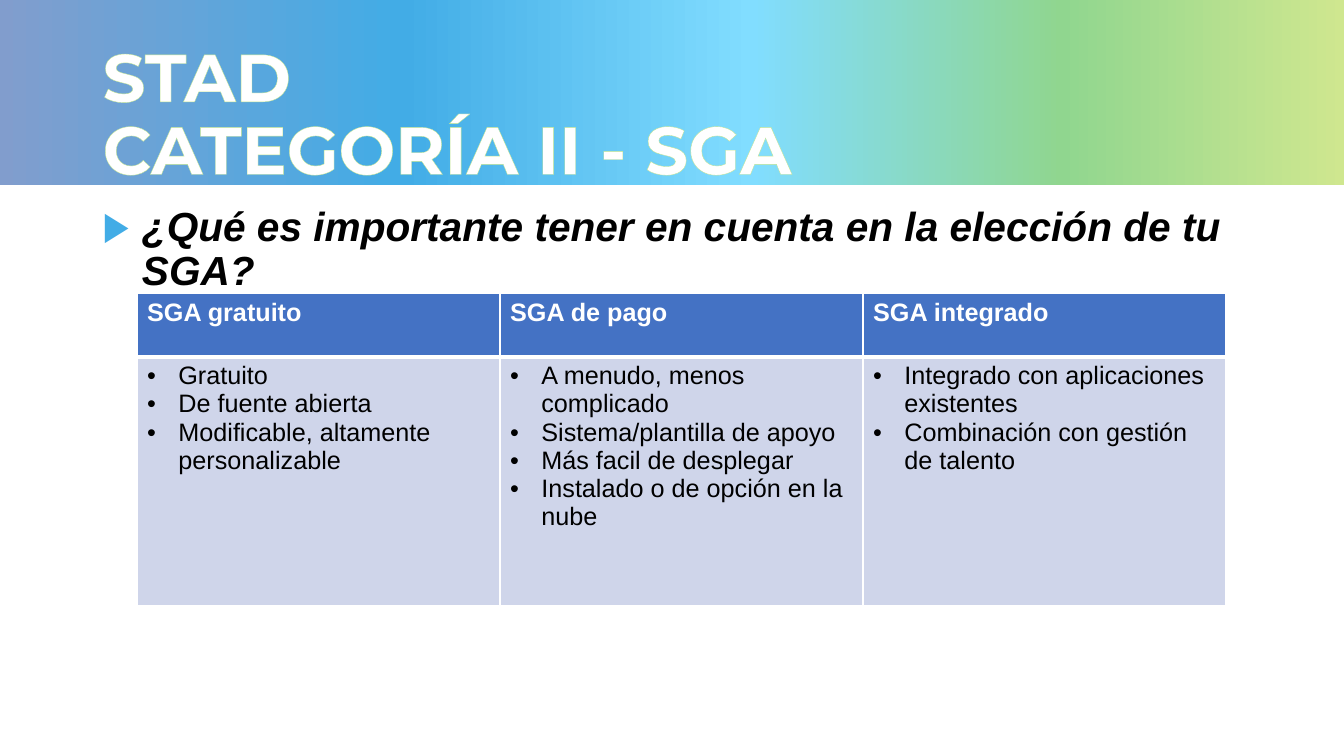
from dataclasses import dataclass

from lxml import etree
from pptx import Presentation
from pptx.dml.color import RGBColor
from pptx.enum.shapes import MSO_SHAPE
from pptx.enum.text import MSO_ANCHOR
from pptx.oxml.ns import qn
from pptx.util import Emu, Pt

RECTANGLE = MSO_SHAPE.RECTANGLE
MIDDLE = MSO_ANCHOR.MIDDLE
TOP = MSO_ANCHOR.TOP
EMU_PER_PX = 9144


@dataclass(frozen=True)
class Theme:
    title_font: str = "Montserrat"
    body_font: str = "Arial"
    title_size: int = 48
    question_size: int = 29
    table_size: int = 18
    white: str = "FFFFFF"
    black: str = "000000"
    title_outline: str = "BFE38F"
    accent: str = "42ACE6"
    header_fill: str = "4472C4"
    body_fill: str = "CFD5EA"
    band_stops: tuple = ((0, "819DCD"), (30, "42ACE6"), (56, "81DDFF"),
                         (79, "90D68F"), (100, "CFE78F"))


THEME = Theme()

OPTIONS = (
    ("SGA gratuito", ("Gratuito", "De fuente abierta",
                      "Modificable, altamente personalizable")),
    ("SGA de pago", ("A menudo, menos complicado", "Sistema/plantilla de apoyo",
                     "Más facil de desplegar", "Instalado o de opción en la nube")),
    ("SGA integrado", ("Integrado con aplicaciones existentes",
                       "Combinación con gestión de talento")),
)


def px(length):
    return Emu(length * EMU_PER_PX)


def add_color(parent, color):
    etree.SubElement(parent, qn("a:srgbClr"), val=color)


def add_line(parent, tag, color, width):
    line = etree.Element(qn(tag), w=str(Pt(width)))
    add_color(etree.SubElement(line, qn("a:solidFill")), color)
    parent.append(line)
    return line


def add_bullet(paragraph, character, indent, color=None):
    properties = paragraph._p.get_or_add_pPr()
    properties.set("marL", str(px(indent)))
    properties.set("indent", str(-px(indent)))
    if color:
        add_color(etree.SubElement(properties, qn("a:buClr")), color)
    etree.SubElement(properties, qn("a:buFont"), typeface=THEME.body_font)
    etree.SubElement(properties, qn("a:buChar"), char=character)


def write_text(paragraph, text, *, size, color, font=THEME.body_font, bold=False,
               italic=False, line_spacing=None, outline=None):
    paragraph.text = text
    if line_spacing:
        paragraph.line_spacing = line_spacing
    for run in paragraph.runs:
        run.font.name = font
        run.font.size = Pt(size)
        run.font.bold = bold
        run.font.italic = italic
        run.font.color.rgb = RGBColor.from_string(color)
        if outline:
            properties = run._r.get_or_add_rPr()
            properties.insert(0, add_line(properties, "a:ln", outline, 0.75))


def add_text_box(slide, box, anchor):
    frame = slide.shapes.add_textbox(*map(px, box)).text_frame
    frame.word_wrap = True
    frame.vertical_anchor = anchor
    return frame.paragraphs[0]


def add_title_band(slide, left, top, width, height):
    band = slide.shapes.add_shape(RECTANGLE, *map(px, (left, top, width, height)))
    band.shadow.inherit = False
    band.line.fill.background()
    band.fill.gradient()
    band.fill.gradient_angle = 0
    stops = band._element.spPr.find(qn("a:gradFill")).find(qn("a:gsLst"))
    for stop in list(stops):
        stops.remove(stop)
    for position, color in THEME.band_stops:
        add_color(etree.SubElement(stops, qn("a:gs"), pos=str(position * 1000)), color)
    paragraph = add_text_box(slide, (left + 92, top + 32, 1150, 167), MIDDLE)
    write_text(paragraph, "STAD\vCATEGORÍA II - SGA", size=THEME.title_size,
               color=THEME.white, font=THEME.title_font, bold=True,
               line_spacing=0.9, outline=THEME.title_outline)


def add_question(slide, left, top, width, height):
    paragraph = add_text_box(slide, (left, top, width, height), TOP)
    add_bullet(paragraph, "▶", 39, THEME.accent)
    write_text(paragraph, "¿Qué es importante tener en cuenta en la elección de tu SGA?",
               size=THEME.question_size, color=THEME.black, bold=True, italic=True,
               line_spacing=0.9)


def style_cell(cell, fill, top_border, bottom_border):
    properties = cell._tc.get_or_add_tcPr()
    borders = (("a:lnL", 1), ("a:lnR", 1), ("a:lnT", top_border), ("a:lnB", bottom_border))
    for tag, width in borders:
        add_line(properties, tag, THEME.white, width)
    cell.fill.solid()
    cell.fill.fore_color.rgb = RGBColor.from_string(fill)


def add_options_table(slide, left, top, width, height):
    header_height = 63
    box = map(px, (left, top, width, height))
    table = slide.shapes.add_table(2, len(OPTIONS), *box).table
    table.horz_banding = False
    table.rows[0].height = px(header_height)
    table.rows[1].height = px(height - header_height)
    for column, (heading, points) in enumerate(OPTIONS):
        table.columns[column].width = px(width // len(OPTIONS))
        header, body = table.cell(0, column), table.cell(1, column)
        style_cell(header, THEME.header_fill, 1, 3)
        style_cell(body, THEME.body_fill, 3, 1)
        write_text(header.text_frame.paragraphs[0], heading, size=THEME.table_size,
                   color=THEME.white, bold=True)
        for index, point in enumerate(points):
            frame = body.text_frame
            paragraph = frame.add_paragraph() if index else frame.paragraphs[0]
            add_bullet(paragraph, "•", 31)
            write_text(paragraph, point, size=THEME.table_size, color=THEME.black)


def main():
    presentation = Presentation()
    presentation.slide_width = px(1333)
    presentation.slide_height = px(750)
    slide = presentation.slides.add_slide(presentation.slide_layouts[6])
    add_title_band(slide, 0, 0, 1333, 184)
    add_question(slide, 92, 200, 1150, 476)
    add_options_table(slide, 136, 291, 1080, 310)
    presentation.save("out.pptx")


if __name__ == "__main__":
    main()
